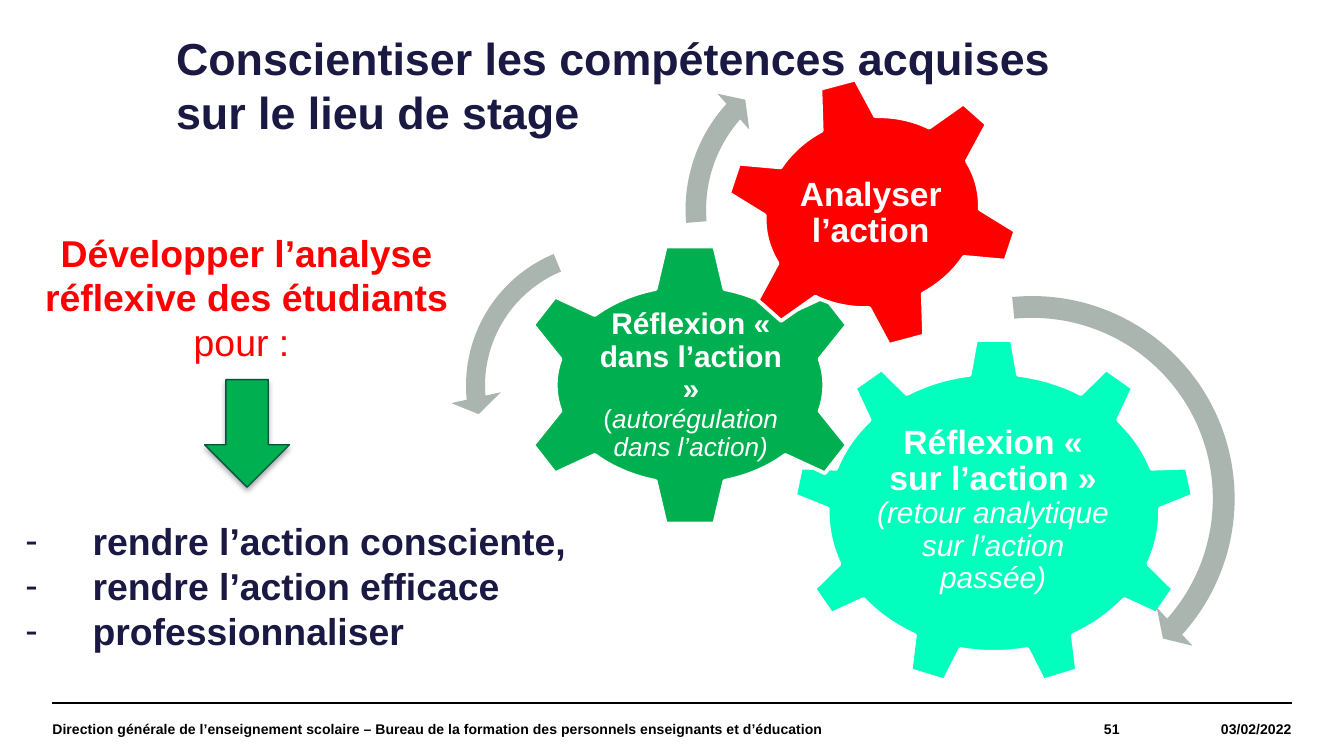
from lxml import etree
from pptx import Presentation, util as u
from pptx.dml.color import RGBColor
from pptx.enum import shapes, text
from pptx.oxml import parse_xml
from pptx.oxml.ns import nsdecls, qn

COLORS = {"navy": "191944", "red": "FF0000", "green": "00B050", "dark_green": "005640",
          "mint": "02FFBD", "grey": "ABB5B0", "white": "FFFFFF", "black": "000000"}
FONT = "Arial"
SHAPE = shapes.MSO_SHAPE
LEFT, CENTER, RIGHT = text.PP_ALIGN.LEFT, text.PP_ALIGN.CENTER, text.PP_ALIGN.RIGHT
TOP, MIDDLE = text.MSO_ANCHOR.TOP, text.MSO_ANCHOR.MIDDLE

# Content: a run is (text, size, style), style being any of "b" and "i"
TITLE = "Conscientiser les compétences acquises sur le lieu de stage"
GOAL = [("Développer l’analyse réflexive des étudiants ", 20, "b"), ("pour : ", 20, "")]
BENEFITS = ["rendre l’action consciente,", "rendre l’action efficace", "professionnaliser"]
# Gear: preset, box, rotation, colour, text box, inset, runs
GEARS = [
    (SHAPE.GEAR_9, (424.8, 181.4, 215.3, 186.5), 0, "mint", (465.8, 225.4, 132.5, 95.8), 2.2,
     [("Réflexion « sur l’action » ", 18, "b"),
      ("(retour analytique sur l’action passée)", 16, "i")]),
    (SHAPE.GEAR_6, (275, 130.3, 189.4, 151.9), 0, "green", (319, 169.2, 102.2, 74.9), 1.5,
     [("Réflexion « dans l’action » ", 16, "b"), ("(", 14, ""),
      ("autorégulation dans l’action)", 14, "i")]),
    (SHAPE.GEAR_6, (387.4, 41, 159.8, 145.4), 345, "red", (422.6, 72.7, 87.8, 83.5), 2.2,
     [("Analyser l’action", 18, "b")]),
]
# Curved arrow: preset, left, top, diameter, adjustments
CURVED_ARROWS = [
    (SHAPE.CIRCULAR_ARROW, 436.3, 150.5, 233.3, (0.05, 2.99, 25.17, 158.6, 0.06)),
    (SHAPE.LEFT_CIRCULAR_ARROW, 241.2, 121.7, 169.9, (0.06, 4.3, 104.89, 148.38, 0.08)),
    (SHAPE.CIRCULAR_ARROW, 360, 20.9, 182.9, (0.06, 3.94, 133.14, 105.08, 0.07)),
]
# Footer: text, left, width, alignment
FOOTER = [
    ("Direction générale de l’enseignement scolaire – Bureau de la formation des personnels "
     "enseignants et d’éducation", 28.1, 465.1, LEFT),
    ("51", 493.2, 106.6, RIGHT),
    ("03/02/2022", 599.8, 92.1, RIGHT),
]
FOOTER_TOP = 376.6


def rgb(name):
    return RGBColor.from_string(COLORS[name])


def place(shape, box):
    shape.left, shape.top, shape.width, shape.height = map(u.Pt, box)


def style_run(run, size, color, style):
    font = run.font
    font.name, font.size = FONT, u.Pt(size)
    font.bold, font.italic = "b" in style, "i" in style
    font.color.rgb = rgb(color)


def add_text(slide, box, paragraphs, color, align=LEFT, anchor=TOP, inset=None, spacing=None):
    shape = slide.shapes.add_textbox(*map(u.Pt, box))
    frame = shape.text_frame
    frame.word_wrap, frame.vertical_anchor = True, anchor
    if inset is not None:
        frame.margin_left = frame.margin_right = u.Pt(inset)
        frame.margin_top = frame.margin_bottom = u.Pt(inset)
    for index, runs in enumerate(paragraphs):
        paragraph = frame.add_paragraph() if index else frame.paragraphs[0]
        paragraph.alignment = align
        if spacing:
            paragraph.line_spacing = spacing
        for content, size, style in runs:
            run = paragraph.add_run()
            run.text = content
            style_run(run, size, color, style)
    return shape


def add_filled(slide, preset, box, fill, line=None, width=0):
    shape = slide.shapes.add_shape(preset, *map(u.Pt, box))
    shape.shadow.inherit = False
    shape.fill.solid()
    shape.fill.fore_color.rgb = rgb(fill)
    if line:
        shape.line.color.rgb = rgb(line)
        shape.line.width = u.Pt(width)
    else:
        shape.line.fill.background()
    return shape


presentation = Presentation()
presentation.slide_width, presentation.slide_height = u.Pt(720), u.Pt(405)
slide = presentation.slides.add_slide(presentation.slide_layouts[5])

# Title
title = slide.shapes.title
place(title, (87.1, 13, 495.4, 65.5))
title.text_frame.text = TITLE
title.text_frame.word_wrap = True
title.text_frame.auto_size = text.MSO_AUTO_SIZE.NONE
title.text_frame.vertical_anchor = TOP
title.text_frame.paragraphs[0].alignment = LEFT
style_run(title.text_frame.paragraphs[0].runs[0], 24, "navy", "b")

# Footer rule
rule = slide.shapes.add_connector(shapes.MSO_CONNECTOR.STRAIGHT, u.Pt(28.1), u.Pt(FOOTER_TOP),
                                  u.Pt(691.9), u.Pt(FOOTER_TOP))
rule.line.color.rgb = rgb("black")
rule.line.width = u.Pt(0.8)
etree.SubElement(rule.element.spPr, qn("a:effectLst"))

# Gears with their labels
for preset, box, rotation, color, label_box, inset, runs in GEARS:
    gear = add_filled(slide, preset, box, color, "white", 2)
    gear.rotation = rotation
    add_text(slide, label_box, [runs], "white", CENTER, MIDDLE, inset, 0.9)

# Curved arrows around the gears
for preset, left, top, diameter, adjustments in CURVED_ARROWS:
    arrow = add_filled(slide, preset, (left, top, diameter, diameter), "grey")
    for index, value in enumerate(adjustments):
        arrow.adjustments[index] = value

# Benefits, as a dashed list
benefits = add_text(slide, (6.5, 274.3, 344.2, 131), [[(line, 20, "b")] for line in BENEFITS],
                    "navy")
for paragraph in benefits.text_frame.paragraphs:
    properties = paragraph._p.get_or_add_pPr()
    properties.set("marL", str(u.Pt(36)))
    properties.set("indent", str(u.Pt(-36)))
    etree.SubElement(properties, qn("a:buFont"), typeface=FONT)
    etree.SubElement(properties, qn("a:buChar"), char="-")

# Goal and the arrow below it
add_text(slide, (13, 119.5, 238.3, 101.5), [GOAL], "red", CENTER)
down_arrow = add_filled(slide, SHAPE.DOWN_ARROW, (109.7, 203.4, 45.4, 57.6),
                        "green", "dark_green", 0.75)
down_arrow.element.spPr.find(qn("a:effectLst")).append(parse_xml(
    f'<a:outerShdw {nsdecls("a")} blurRad="{u.Pt(3.1)}" dist="{u.Pt(1.8)}" dir="5400000" '
    f'rotWithShape="0"><a:srgbClr val="{COLORS["black"]}"><a:alpha val="35000"/></a:srgbClr>'
    '</a:outerShdw>'))

# Footer
for content, left, width, align in FOOTER:
    add_text(slide, (left, FOOTER_TOP, width, 28.1), [[(content, 7.5, "b")]], "black",
             align, MIDDLE, 0)

presentation.save("out.pptx")
